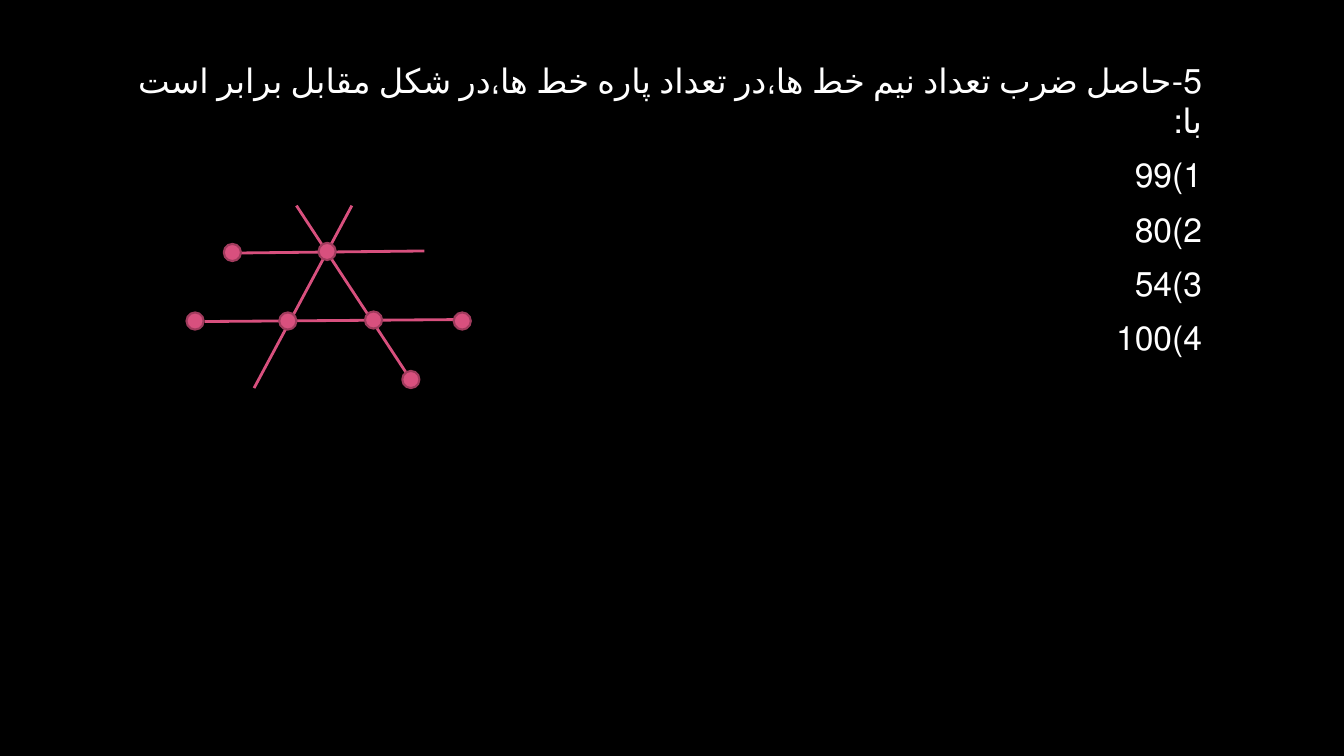
from pptx import Presentation
from pptx.dml.color import RGBColor
from pptx.enum.lang import MSO_LANGUAGE_ID
from pptx.enum.shapes import MSO_CONNECTOR, MSO_SHAPE
from pptx.enum.text import MSO_ANCHOR, PP_ALIGN
from pptx.oxml.ns import qn
from pptx.util import Inches, Pt
from lxml import etree

BLACK = RGBColor(0x00, 0x00, 0x00)
WHITE = RGBColor(0xFF, 0xFF, 0xFF)
PINK = RGBColor(0xD8, 0x50, 0x7E)
DARK_PINK = RGBColor(0xA0, 0x3B, 0x5D)

QUESTION = "5-حاصل ضرب تعداد نیم خط ها،در تعداد پاره خط ها،در شکل مقابل برابر است\vبا:"
ANSWERS = [99, 80, 54, 100]
QUESTION_BOX = (0.94, 0.59, 11.08, 5.65)
FONT_FORMAT = {"name": "Calibri", "size": Pt(24), "language_id": MSO_LANGUAGE_ID.FARSI}
PARAGRAPH_FORMAT = {"alignment": PP_ALIGN.RIGHT, "space_after": Pt(10)}
FRAME_FORMAT = {"word_wrap": True, "vertical_anchor": MSO_ANCHOR.TOP, "margin_top": 0}

# Start and end of each line, then the left top corner of each dot, in inches
LINES = [
    (2.37, 2.51, 4.21, 2.49),
    (2.03, 3.19, 4.63, 3.17),
    (3.49, 2.04, 2.52, 3.85),
    (2.94, 2.04, 4.03, 3.7),
]
DOTS = [(2.22, 2.42), (1.85, 3.1), (2.77, 3.1), (3.16, 2.41),
        (3.62, 3.09), (4.5, 3.1), (3.99, 3.68)]
DOT_SIZE = 0.17


def apply_format(target, values):
    for name, value in values.items():
        setattr(target, name, value)


def add_question(slide):
    box = slide.shapes.add_textbox(*map(Inches, QUESTION_BOX))
    frame = box.text_frame
    apply_format(frame, FRAME_FORMAT)
    choices = [f"{number}){answer}" for number, answer in enumerate(ANSWERS, 1)]
    frame.text = "\n".join([QUESTION, *choices])
    for paragraph in frame.paragraphs:
        apply_format(paragraph, PARAGRAPH_FORMAT)
        paragraph._p.get_or_add_pPr().set("rtl", "1")
        for run in paragraph.runs:
            apply_format(run.font, FONT_FORMAT)
            run.font.color.rgb = WHITE


def add_line(slide, ends):
    line = slide.shapes.add_connector(MSO_CONNECTOR.STRAIGHT, *map(Inches, ends))
    line.line.color.rgb = PINK
    line.line.width = Pt(2)
    etree.SubElement(line._element.spPr, qn("a:effectLst"))


def add_dot(slide, corner):
    dot = slide.shapes.add_shape(
        MSO_SHAPE.OVAL, *map(Inches, (*corner, DOT_SIZE, DOT_SIZE)))
    dot.shadow.inherit = False
    dot.fill.solid()
    dot.fill.fore_color.rgb = PINK
    dot.line.color.rgb = DARK_PINK
    dot.line.width = Pt(1.5)


def main():
    presentation = Presentation()
    presentation.slide_width = Inches(13.33)
    presentation.slide_height = Inches(7.5)
    slide = presentation.slides.add_slide(presentation.slide_layouts[6])
    slide.background.fill.solid()
    slide.background.fill.fore_color.rgb = BLACK
    add_question(slide)
    for ends in LINES:
        add_line(slide, ends)
    for corner in DOTS:
        add_dot(slide, corner)
    presentation.save("out.pptx")


if __name__ == "__main__":
    main()
